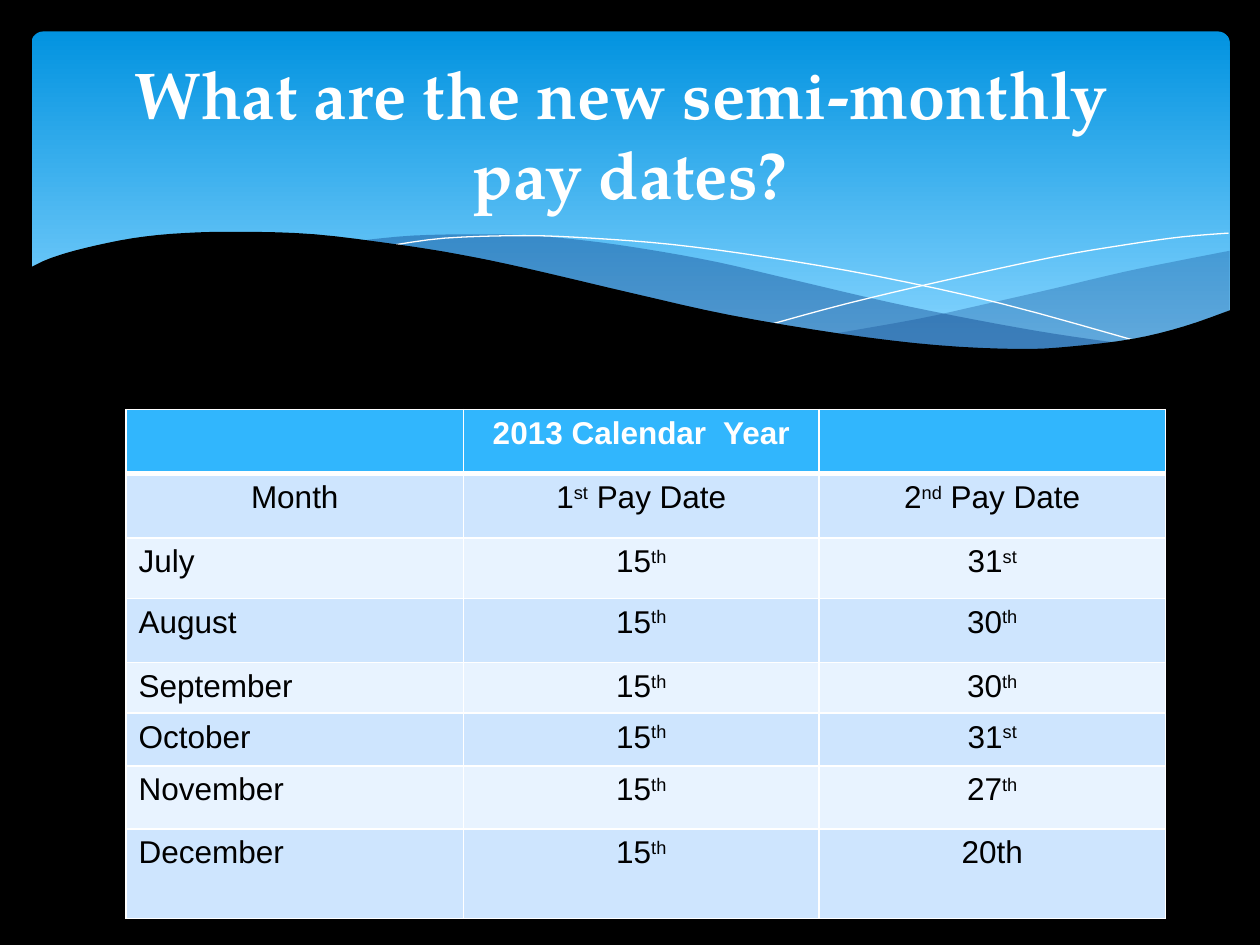
from lxml import etree
from pptx import Presentation
from pptx.dml.color import RGBColor
from pptx.enum.shapes import MSO_SHAPE
from pptx.enum.text import MSO_ANCHOR, PP_ALIGN
from pptx.oxml.ns import qn
from pptx.util import Inches, Pt

ROUNDED = MSO_SHAPE.ROUNDED_RECTANGLE
MIDDLE = MSO_ANCHOR.MIDDLE
LEFT, CENTER = PP_ALIGN.LEFT, PP_ALIGN.CENTER

COLORS = {
    "black": "000000", "white": "FFFFFF", "navy": "073E87",
    "sky_top": "0293E0", "sky_bottom": "83D3FE",
    "header": "31B6FD", "band_dark": "CEE5FE", "band_light": "E8F3FF",
}
TITLE = "What are the new semi-monthly \vpay dates?"
TITLE_FONT, TABLE_FONT = "TeX Gyre Pagella", "Arial"

# Each cell is (text, superscript, text after it).
ROWS = [
    [("",), ("2013 Calendar  Year",), ("",)],
    [("Month",), ("1", "st", " Pay Date"), ("2", "nd", " Pay Date")],
    [("July",), ("15", "th"), ("31", "st")],
    [("August",), ("15", "th"), ("30", "th")],
    [("September",), ("15", "th"), ("30", "th")],
    [("October",), ("15", "th"), ("31", "st")],
    [("November",), ("15", "th"), ("27", "th")],
    [("December",), ("15", "th"), ("20th",)],
]
COLUMN_WIDTHS = [2.68, 2.82, 2.75]
ROW_HEIGHTS = [0.51, 0.51, 0.48, 0.51, 0.4, 0.42, 0.5, 0.71]

# Waves, back to front: every curve is a list of knots to pass smoothly through.
WAVES = [
    {"curves": [
        [(9.76, 1.99), (9.35, 2.07), (8.91, 2.16), (8.32, 2.3), (7.79, 2.42),
         (7.29, 2.53), (6.61, 2.65)],
        [(6.61, 2.65), (7.05, 2.71), (7.57, 2.76), (8.14, 2.78), (8.63, 2.75),
         (9.05, 2.69), (9.42, 2.59), (9.76, 2.47)]],
     "fill": "navy", "opacity": 29},
    {"curves": [
        [(8.93, 2.73), (8.37, 2.65), (7.75, 2.54), (7.06, 2.4), (6.29, 2.22),
         (5.69, 2.08), (5.14, 1.98), (4.65, 1.91), (4.2, 1.87), (3.8, 1.86),
         (3.28, 1.87), (2.86, 1.91)],
        [(2.86, 1.91), (3.42, 1.99), (4.04, 2.11), (4.91, 2.32), (5.66, 2.48),
         (6.34, 2.61), (6.95, 2.7), (7.48, 2.76), (8.07, 2.78), (8.57, 2.77),
         (8.93, 2.73)]],
     "fill": "navy", "opacity": 40},
    {"curves": [
        [(3.09, 1.95), (3.53, 1.89), (4.16, 1.87), (4.69, 1.89), (5.33, 1.94),
         (6.08, 2.04), (6.95, 2.19), (7.95, 2.41), (9.07, 2.72)]],
     "line": "white"},
    {"curves": [
        [(6.13, 2.57), (6.72, 2.41), (7.48, 2.23), (8.36, 2.04), (8.95, 1.94),
         (9.38, 1.88), (9.75, 1.85)]],
     "line": "white"},
    {"curves": [
        [(9.77, 2.46), (9.4, 2.59), (8.99, 2.69), (8.5, 2.75), (8.09, 2.77),
         (7.44, 2.74), (6.68, 2.65), (5.79, 2.5), (5.03, 2.33), (4.18, 2.13),
         (3.65, 2.02), (3.15, 1.94), (2.5, 1.86), (1.93, 1.84), (1.46, 1.85),
         (1.06, 1.89), (0.67, 1.97), (0.4, 2.05), (0.23, 2.13)],
        [(0.23, 3.29), (9.77, 3.29)]],
     "fill": "black"},
]


def color(name):
    return RGBColor.from_string(COLORS[name])


def smooth(knots, steps=4):
    """Return points of a Catmull-Rom curve through the knots."""
    padded = [knots[0], *knots, knots[-1]]
    points = [knots[0]]
    for a, b, c, d in zip(padded, padded[1:], padded[2:], padded[3:]):
        for step in range(1, steps + 1):
            t = step / steps
            points.append(tuple(
                q + t / 2 * (r - p + t * (2 * p - 5 * q + 4 * r - s
                                          + t * (3 * (q - r) + s - p)))
                for p, q, r, s in zip(a, b, c, d)))
    return points


def add_wave(slide, curves, fill=None, opacity=100, line=None):
    points = [(Inches(x), Inches(y)) for knots in curves for x, y in smooth(knots)]
    builder = slide.shapes.build_freeform(*points[0])
    builder.add_line_segments(points[1:], close=fill is not None)
    wave = builder.convert_to_shape()
    wave.shadow.inherit = False
    if fill:
        wave.fill.solid()
        wave.fill.fore_color.rgb = color(fill)
        wave.line.fill.background()
        if opacity < 100:
            tint = wave.fill._xPr.find(".//" + qn("a:srgbClr"))
            etree.SubElement(tint, qn("a:alpha"), val=str(opacity * 1000))
    else:
        wave.fill.background()
        wave.line.color.rgb = color(line)
        wave.line.width = Pt(0)


def add_sky(slide):
    sky = slide.shapes.add_shape(
        ROUNDED, Inches(0.25), Inches(0.25), Inches(9.51), Inches(2.7))
    sky.adjustments[0] = 0.034
    sky.shadow.inherit = False
    sky.line.fill.background()
    sky.fill.gradient()
    sky.fill.gradient_angle = 270
    stops = zip(sky.fill.gradient_stops, [(0, "sky_top"), (0.9, "sky_bottom")])
    for stop, (position, name) in stops:
        stop.position = position
        stop.color.rgb = color(name)


def add_title(slide):
    box = slide.shapes.add_textbox(Inches(0.5), Inches(0.37), Inches(9), Inches(1.37))
    frame = box.text_frame
    frame.word_wrap = True
    frame.vertical_anchor = MIDDLE
    para = frame.paragraphs[0]
    para.text = TITLE
    para.alignment = CENTER
    set_font(para.font, TITLE_FONT, 38, "white", True)


def set_font(font, name, size, color_name, bold):
    font.name, font.size, font.bold = name, Pt(size), bold
    font.color.rgb = color(color_name)


def set_borders(cell, top, bottom):
    properties = cell._tc.get_or_add_tcPr()
    for side, points in (("L", 1), ("R", 1), ("T", top), ("B", bottom)):
        border = etree.SubElement(properties, qn(f"a:ln{side}"), w=str(Pt(points)))
        paint = etree.SubElement(border, qn("a:solidFill"))
        etree.SubElement(paint, qn("a:srgbClr"), val=COLORS["white"])


def fill_cell(cell, parts, row, column):
    header = row == 0
    set_borders(cell, top=3 if row == 1 else 1, bottom=3 if header else 1)
    band = "header" if header else "band_dark" if row % 2 else "band_light"
    cell.fill.solid()
    cell.fill.fore_color.rgb = color(band)
    para = cell.text_frame.paragraphs[0]
    para.alignment = LEFT if column == 0 and row > 1 else CENTER
    set_font(para.font, TABLE_FONT, 18, "white" if header else "black", header)
    for index, text in enumerate(parts):
        if text:
            span = para.add_run()
            span.text = text
            if index == 1:
                span._r.get_or_add_rPr().set("baseline", "30000")


def add_pay_dates(slide):
    table = slide.shapes.add_table(
        len(ROWS), len(COLUMN_WIDTHS), Inches(1), Inches(3.25),
        Inches(sum(COLUMN_WIDTHS)), Inches(sum(ROW_HEIGHTS))).table
    for column, width in zip(table.columns, COLUMN_WIDTHS):
        column.width = Inches(width)
    for row, height in zip(table.rows, ROW_HEIGHTS):
        row.height = Inches(height)
    for r, cells in enumerate(ROWS):
        for c, parts in enumerate(cells):
            fill_cell(table.cell(r, c), parts, r, c)


def main():
    deck = Presentation()
    deck.slide_width, deck.slide_height = Inches(10), Inches(7.5)
    slide = deck.slides.add_slide(deck.slide_layouts[6])
    slide.background.fill.solid()
    slide.background.fill.fore_color.rgb = color("black")
    add_sky(slide)
    for wave in WAVES:
        add_wave(slide, **wave)
    add_title(slide)
    add_pay_dates(slide)
    deck.save("out.pptx")


if __name__ == "__main__":
    main()
